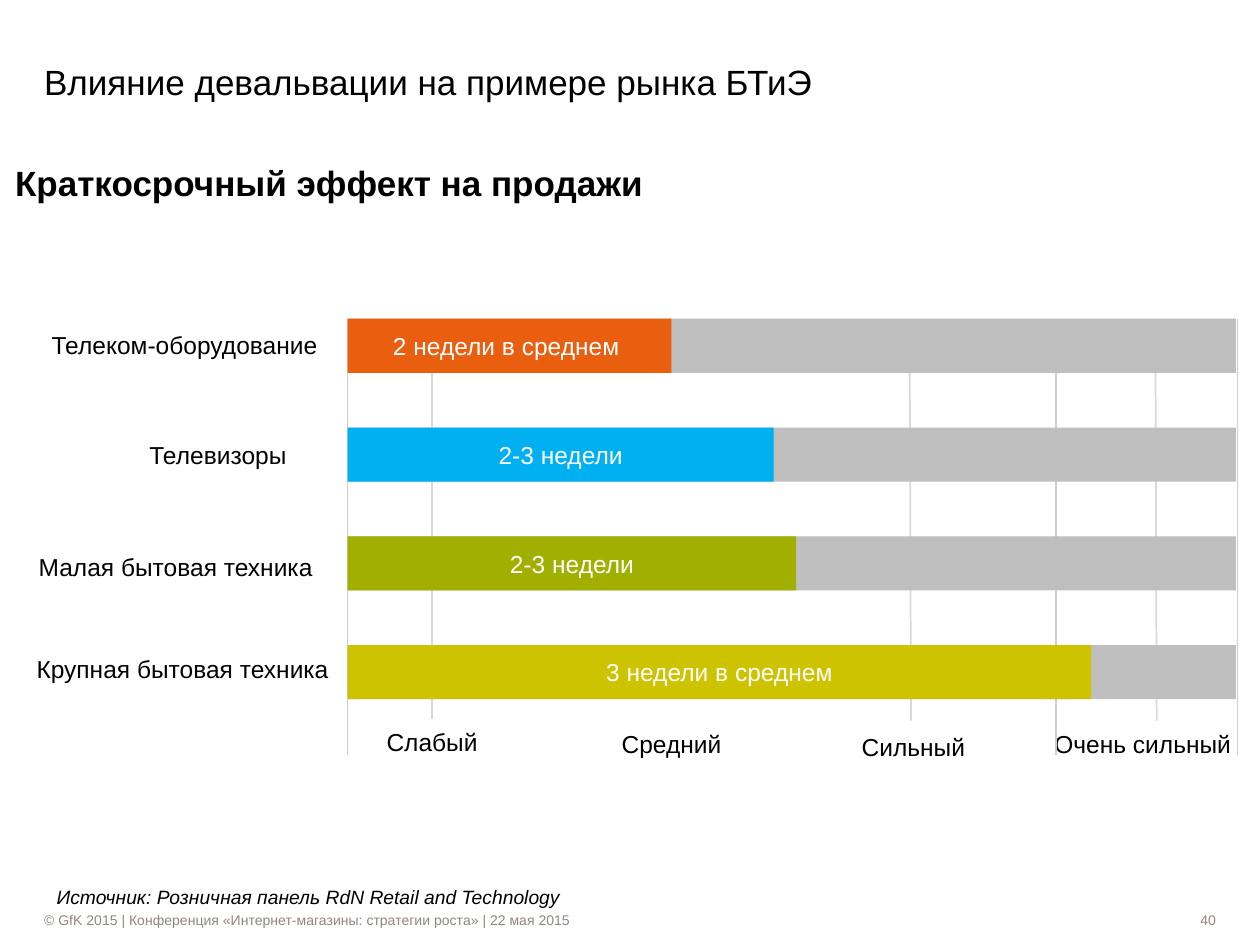
from typing import NamedTuple

from lxml.etree import SubElement
from pptx import Presentation
from pptx.dml.color import RGBColor as Rgb
from pptx.enum.shapes import MSO_CONNECTOR as Link, MSO_SHAPE as Form
from pptx.enum.text import MSO_ANCHOR as Anchor, PP_ALIGN as Align
from pptx.oxml.ns import qn
from pptx.util import Inches, Pt

LEFT, TOP, WIDE, HIGH = 2.76, 2.53, 7.05, 0.43
PITCH = (5.12 - TOP) / 3


class Box(NamedTuple):
    left: float
    top: float
    width: float
    height: float


class Row(NamedTuple):
    name: str
    label: Box
    note: str
    length: float
    hue: str


class Rule(NamedTuple):
    foot: tuple
    head: tuple
    hue: str
    weight: float


class Tick(NamedTuple):
    name: str
    box: Box


ROWS = [
    Row("Телеком-оборудование", Box(0.12, 2.47, 2.65, 0.53), "2 недели в среднем ", 2.57, "E95E0F"),
    Row("Телевизоры", Box(0.5, 3.34, 2.42, 0.53), "2-3 недели", 3.38, "00B0F0"),
    Row("Малая бытовая техника", Box(-0.04, 4.23, 2.83, 0.53), "2-3 недели", 3.56, "A1AF00"),
    Row("Крупная бытовая техника", Box(-0.12, 5.04, 3.1, 0.53), "3 недели в среднем", 5.9, "CDC300"),
]
RULES = [
    Rule((7.23, 5.72), (7.22, 2.7), "D9D9D9", 1),
    Rule((9.18, 5.72), (9.17, 2.55), "D9D9D9", 1),
    Rule((3.43, 5.71), (3.43, TOP), "D9D9D9", 1),
] + [Rule((x, 5.99), (x, TOP), "D3CECC", 0.75) for x in (9.82, LEFT, 8.38)]
LAST = Tick("Очень сильный", Box(8.34, 5.68, 1.46, 0.45))
TICKS = [
    Tick("Слабый", Box(2.83, 5.64, 1.2, 0.49)),
    Tick("Средний", Box(4.73, 5.66, 1.2, 0.49)),
    Tick("Сильный", Box(6.65, 5.68, 1.2, 0.49)),
]
NONE = (0, 0, 0, 0)
SIDE = (0.16, 0, 0.12, 0)
INSET = (0.1, 0.05, 0.1, 0.05)


def tint(code: str) -> Rgb:
    return Rgb.from_string(code)


def write(shape, text: str, hue="000000", align=Align.LEFT, inset=NONE,
          anchor=Anchor.MIDDLE, **style) -> None:
    frame = shape.text_frame
    frame.word_wrap = True
    frame.vertical_anchor = anchor
    for side, gap in zip(("left", "top", "right", "bottom"), inset):
        setattr(frame, f"margin_{side}", Inches(gap))
    para = frame.paragraphs[0]
    para.alignment = align
    run = para.add_run()
    run.text = text
    for key, value in {"name": "Arial", "size": Pt(14), **style}.items():
        setattr(run.font, key, value)
    run.font.color.rgb = tint(hue)


def add_rect(shapes, box: Box, hue: str):
    rect = shapes.add_shape(Form.RECTANGLE, *map(Inches, box))
    rect.shadow.inherit = False
    rect.fill.solid()
    rect.fill.fore_color.rgb = tint(hue)
    rect.line.fill.background()
    return rect


def add_text(shapes, box: Box, text: str, **style) -> None:
    write(shapes.add_textbox(*map(Inches, box)), text, **style)


def add_rule(shapes, rule: Rule) -> None:
    line = shapes.add_connector(Link.STRAIGHT, *map(Inches, rule.foot + rule.head))
    line.line.color.rgb = tint(rule.hue)
    line.line.width = Pt(rule.weight)
    SubElement(line._element.spPr, qn("a:effectLst"))


def add_bar(shapes, top: float, row: Row) -> None:
    add_rect(shapes, Box(LEFT, top, WIDE, HIGH), "BFBFBF")
    bar = add_rect(shapes, Box(LEFT, top, row.length, HIGH), row.hue)
    write(bar, row.note, hue="FFFFFF", align=Align.CENTER, inset=INSET)


def add_graph(shapes) -> None:
    add_text(shapes, LAST.box, LAST.name, align=Align.CENTER)
    for rule in RULES:
        add_rule(shapes, rule)
    for i, row in enumerate(ROWS):
        add_bar(shapes, TOP + i * PITCH, row)
    for tick in TICKS:
        add_text(shapes, tick.box, tick.name, align=Align.CENTER)
    for row in ROWS:
        add_text(shapes, row.label, row.name, align=Align.CENTER, inset=SIDE)


def main() -> None:
    deck = Presentation()
    deck.slide_width, deck.slide_height = Inches(10), Inches(7.5)
    shapes = deck.slides.add_slide(deck.slide_layouts[6]).shapes

    small = {"hue": "928580", "size": Pt(8)}
    foot = add_rect(shapes, Box(0.35, 7.22, 7.72, 0.16), "FFFFFF")
    write(foot, "© GfK 2015 | Конференция «Интернет-магазины: стратегии роста» | 22 мая 2015", **small)
    page = add_rect(shapes, Box(8.23, 7.22, 1.42, 0.16), "FFFFFF")
    write(page, "40", align=Align.RIGHT, **small)

    add_graph(shapes.add_group_shape().shapes)

    head = add_rect(shapes, Box(0.12, 1.13, 9.76, 0.63), "FFFFFF")
    write(head, "Краткосрочный эффект на продажи", size=Pt(20), bold=True)
    add_text(shapes, Box(0.35, 6.98, 9.29, 0.16),
             "Источник: Розничная панель RdN Retail and Technology",
             inset=INSET, anchor=Anchor.TOP, size=Pt(11), italic=True)
    add_text(shapes, Box(0.35, 0.29, 8.58, 0.71),
             "Влияние девальвации на примере рынка БТиЭ", size=Pt(20))
    deck.save("out.pptx")


if __name__ == "__main__":
    main()
